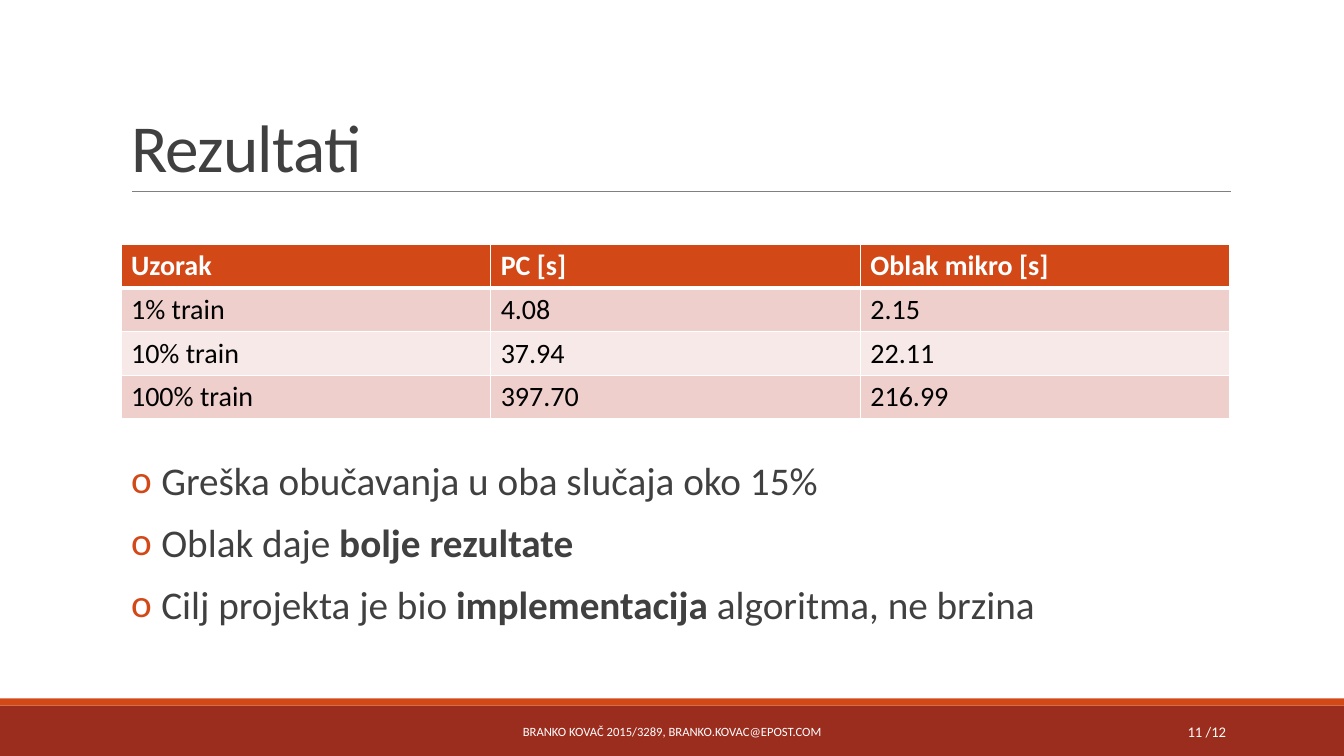
from dataclasses import dataclass
from lxml.etree import SubElement
from pptx import Presentation
from pptx.dml.color import RGBColor
from pptx.enum.shapes import MSO_CONNECTOR, MSO_SHAPE
from pptx.enum.text import MSO_ANCHOR, MSO_AUTO_SIZE, PP_ALIGN
from pptx.oxml.ns import qn
from pptx.util import Inches, Pt

TITLE = "Rezultati"
RESULTS = [
    ("Uzorak", "PC [s]", "Oblak mikro [s]"),
    ("1% train", "4.08", "2.15"),
    ("10% train", "37.94", "22.11"),
    ("100% train", "397.70", "216.99"),
]
# Each conclusion is a list of (text, bold) runs.
CONCLUSIONS = [
    [("Greška obučavanja u oba slučaja oko 15%", False)],
    [("Oblak daje ", False), ("bolje rezultate", True)],
    [("Cilj projekta je bio ", False), ("implementacija", True),
     (" algoritma, ne brzina", False)],
]
AUTHOR = "BRANKO KOVAČ 2015/3289, BRANKO.KOVAC@EPOST.COM"
PAGE = "11 /12"


@dataclass(frozen=True)
class Theme:
    font: str = "Calibri"
    accent: str = "D34817"
    footer: str = "9B2D1F"
    text: str = "404040"
    rule: str = "808080"
    white: str = "FFFFFF"
    black: str = "000000"
    bands: tuple = ("EFCFCC", "F7E9E8")
    title_size: float = 48
    body_size: float = 28
    table_size: float = 20
    page_size: float = 10.5
    author_size: float = 9


THEME = Theme()
SLIDE_W, SLIDE_H = 13.33, 7.5
LEFT, WIDTH = 1.2, 11
TABLE_TOP, ROW_H = 2.42, 0.43
FOOTER_TOP, STRIPE_H = 7, 0.07
BULLET_INDENT = 0.3


def color(code):
    return RGBColor.from_string(code)


def place(shape, left, top, width, height):
    shape.left, shape.top = Inches(left), Inches(top)
    shape.width, shape.height = Inches(width), Inches(height)


def write(paragraph, text, *, size, ink=THEME.text, bold=False, align=None,
          tracking=None):
    """Append a formatted run to the paragraph."""
    run = paragraph.add_run()
    run.text = text
    run.font.name, run.font.size, run.font.bold = THEME.font, Pt(size), bold
    run.font.color.rgb = color(ink)
    if align is not None:
        paragraph.alignment = align
    if tracking is not None:
        run.font._element.set("spc", str(int(tracking * 100)))


def add_bullet(paragraph):
    props = paragraph._p.get_or_add_pPr()
    props.set("marL", str(Inches(BULLET_INDENT)))
    props.set("indent", str(-Inches(BULLET_INDENT)))
    SubElement(SubElement(props, qn("a:buClr")), qn("a:srgbClr"), val=THEME.accent)
    SubElement(props, qn("a:buFont"), typeface=THEME.font)
    SubElement(props, qn("a:buChar"), char="o")


def add_band(slide, top, height, fill):
    band = slide.shapes.add_shape(MSO_SHAPE.RECTANGLE, 0, Inches(top),
                                  Inches(SLIDE_W), Inches(height))
    band.shadow.inherit = False
    band.fill.solid()
    band.fill.fore_color.rgb = color(fill)
    band.line.fill.background()


def add_title_rule(slide):
    rule = slide.shapes.add_connector(MSO_CONNECTOR.STRAIGHT, Inches(1.31), Inches(1.9),
                                      Inches(12.21), Inches(1.9))
    rule.line.color.rgb = color(THEME.rule)
    rule.line.width = Pt(0.5)
    SubElement(rule._element.spPr, qn("a:effectLst"))


def set_borders(cell, widths):
    """Draw white borders; widths maps a side (L, R, T, B) to points."""
    props = cell._tc.get_or_add_tcPr()
    for index, (side, width) in enumerate(widths.items()):
        border = props.makeelement(qn(f"a:ln{side}"), {"w": str(Pt(width))})
        fill = SubElement(border, qn("a:solidFill"))
        SubElement(fill, qn("a:srgbClr"), val=THEME.white)
        props.insert(index, border)


def add_results(slide):
    table = slide.shapes.add_table(
        len(RESULTS), len(RESULTS[0]), Inches(LEFT), Inches(TABLE_TOP),
        Inches(WIDTH), Inches(ROW_H * len(RESULTS))).table
    for r, values in enumerate(RESULTS):
        header = r == 0
        fill = THEME.accent if header else THEME.bands[(r - 1) % 2]
        for c, value in enumerate(values):
            cell = table.cell(r, c)
            cell.fill.solid()
            cell.fill.fore_color.rgb = color(fill)
            set_borders(cell, {"L": 1, "R": 1, "T": 3 if r == 1 else 1,
                               "B": 3 if header else 1})
            write(cell.text_frame.paragraphs[0], value, size=THEME.table_size,
                  ink=THEME.white if header else THEME.black, bold=header)


def fill_title(title):
    place(title, LEFT, 0.31, WIDTH, 1.59)
    title.text_frame.vertical_anchor = MSO_ANCHOR.BOTTOM
    title.text_frame.auto_size = MSO_AUTO_SIZE.NONE
    heading = title.text_frame.paragraphs[0]
    heading.line_spacing = 0.85
    write(heading, TITLE, size=THEME.title_size, align=PP_ALIGN.LEFT, tracking=-0.5)


def fill_conclusions(body):
    place(body, LEFT, 4.53, WIDTH, 2.1)
    frame = body.text_frame
    frame.auto_size = MSO_AUTO_SIZE.SHAPE_TO_FIT_TEXT
    for i, runs in enumerate(CONCLUSIONS):
        conclusion = frame.add_paragraph() if i else frame.paragraphs[0]
        add_bullet(conclusion)
        conclusion.line_spacing = 0.9
        conclusion.space_before = Pt(12 if i else 0)
        conclusion.space_after = Pt(2)
        for text, bold in runs:
            write(conclusion, text, size=THEME.body_size, bold=bold)


def add_footer_text(slide, text, left, width, size, align):
    box = slide.shapes.add_textbox(Inches(left), Inches(7.06), Inches(width), Inches(0.4))
    box.text_frame.word_wrap = True
    box.text_frame.vertical_anchor = MSO_ANCHOR.MIDDLE
    write(box.text_frame.paragraphs[0], text, size=size, ink=THEME.white, align=align)


def main():
    deck = Presentation()
    deck.slide_width, deck.slide_height = Inches(SLIDE_W), Inches(SLIDE_H)
    slide = deck.slides.add_slide(deck.slide_layouts[1])
    add_band(slide, FOOTER_TOP, SLIDE_H - FOOTER_TOP, THEME.footer)
    add_band(slide, FOOTER_TOP - STRIPE_H, STRIPE_H, THEME.accent)
    add_title_rule(slide)
    fill_title(slide.shapes.title)
    add_results(slide)
    fill_conclusions(slide.placeholders[1])
    add_footer_text(slide, PAGE, 10.83, 1.43, THEME.page_size, PP_ALIGN.RIGHT)
    add_footer_text(slide, AUTHOR, 4.03, 5.27, THEME.author_size, PP_ALIGN.CENTER)
    deck.save("out.pptx")


if __name__ == "__main__":
    main()
